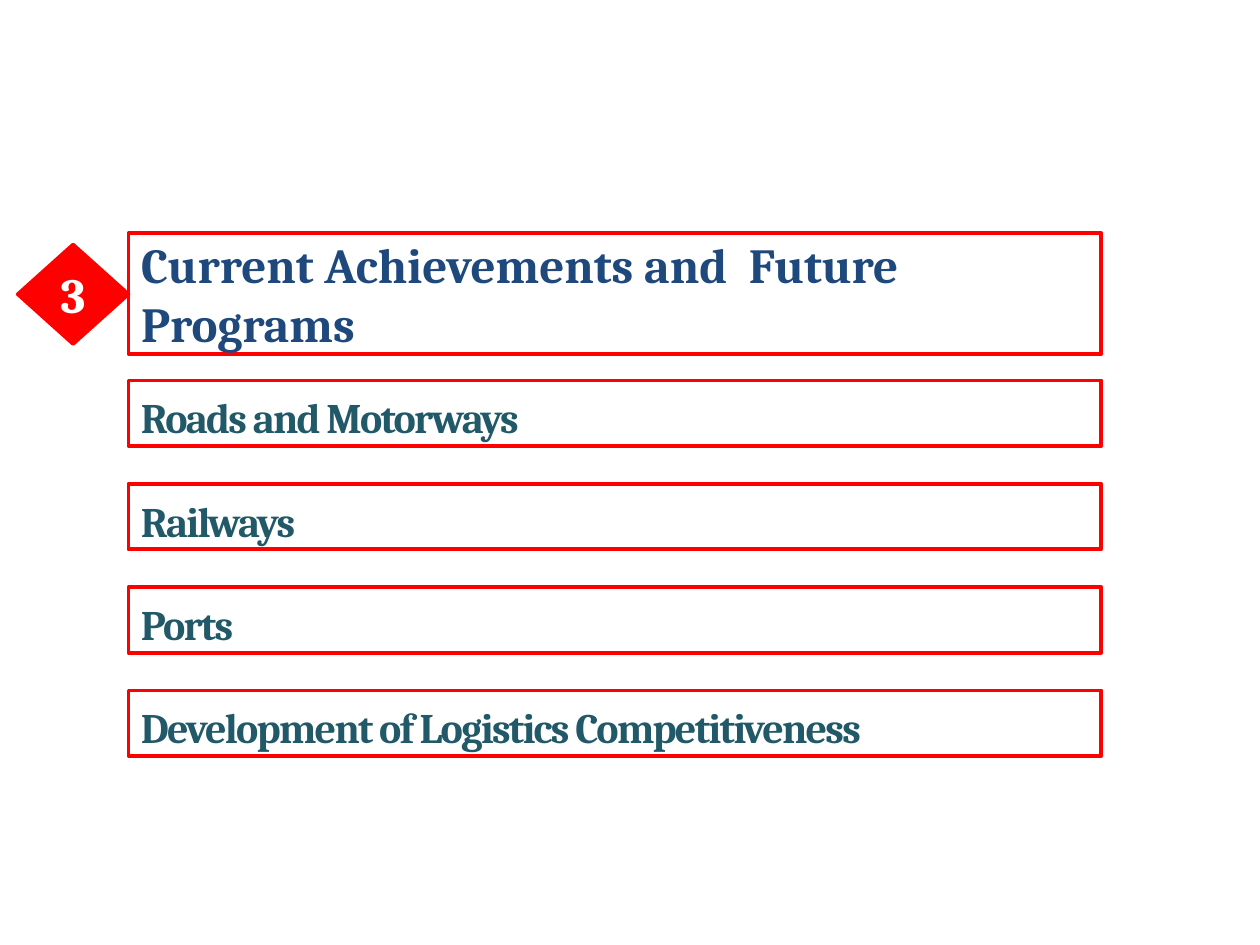
from lxml import etree
from pptx import Presentation
from pptx.dml.color import RGBColor
from pptx.enum import shapes, text
from pptx.oxml.ns import qn
from pptx.util import Inches, Pt

RED = RGBColor(0xFF, 0x00, 0x00)
NAVY = RGBColor(0x1F, 0x49, 0x7D)
TEAL = RGBColor(0x21, 0x59, 0x68)
WHITE = RGBColor(0xFF, 0xFF, 0xFF)

LEFT, WIDTH = Inches(1.02), Inches(7.72)
TOPICS = ["Roads and Motorways", "Railways", "Ports",
          "Development of Logistics Competitiveness"]


def outline(shape, points):
    shape.line.color.rgb = RED
    shape.line.width = Pt(points)


def write(shape, words, size, color, align, anchor):
    """Fill the shape with one bold Cambria paragraph and return it."""
    frame = shape.text_frame
    frame.text = words
    frame.word_wrap = True
    frame.vertical_anchor = anchor
    paragraph = frame.paragraphs[0]
    paragraph.alignment = align
    font = paragraph.runs[0].font
    font.name, font.size, font.bold = "Cambria", Pt(size), True
    font.color.rgb = color
    return paragraph


prs = Presentation()
prs.slide_width, prs.slide_height = Inches(10), Inches(7.5)
slide = prs.slides.add_slide(prs.slide_layouts[5])

# Section heading: the title placeholder with two rounded corners
heading = slide.shapes.title
heading.left, heading.top = LEFT, Inches(1.85)
heading.width, heading.height = WIDTH, Inches(0.96)
geometry = etree.SubElement(heading._element.spPr, qn("a:prstGeom"), prst="round2DiagRect")
etree.SubElement(geometry, qn("a:avLst"))
heading.fill.background()
outline(heading, 2)
write(heading, "Current Achievements and  Future Programs", 28, NAVY,
      text.PP_ALIGN.LEFT, text.MSO_ANCHOR.MIDDLE)
heading.text_frame.auto_size = text.MSO_AUTO_SIZE.NONE

# Section number
number = slide.shapes.add_shape(shapes.MSO_SHAPE.FLOWCHART_DECISION,
                                Inches(0.14), Inches(1.94), Inches(0.88), Inches(0.79))
number.shadow.inherit = False
number.fill.solid()
number.fill.fore_color.rgb = RED
outline(number, 2)
write(number, "3", 28, WHITE, text.PP_ALIGN.CENTER, text.MSO_ANCHOR.MIDDLE)

# Topics, evenly spaced below the heading
for row, topic in enumerate(TOPICS):
    box = slide.shapes.add_shape(shapes.MSO_SHAPE.RECTANGLE, LEFT,
                                 Inches(3.02 + 0.82 * row), WIDTH, Inches(0.52))
    box.shadow.inherit = False
    box.fill.background()
    outline(box, 2.25)
    line = write(box, topic, 24, TEAL, text.PP_ALIGN.LEFT, text.MSO_ANCHOR.TOP)
    line.line_spacing = 1.1
    line.runs[0].font._element.set("spc", "-100")
    box.text_frame.auto_size = text.MSO_AUTO_SIZE.SHAPE_TO_FIT_TEXT

prs.save("out.pptx")
